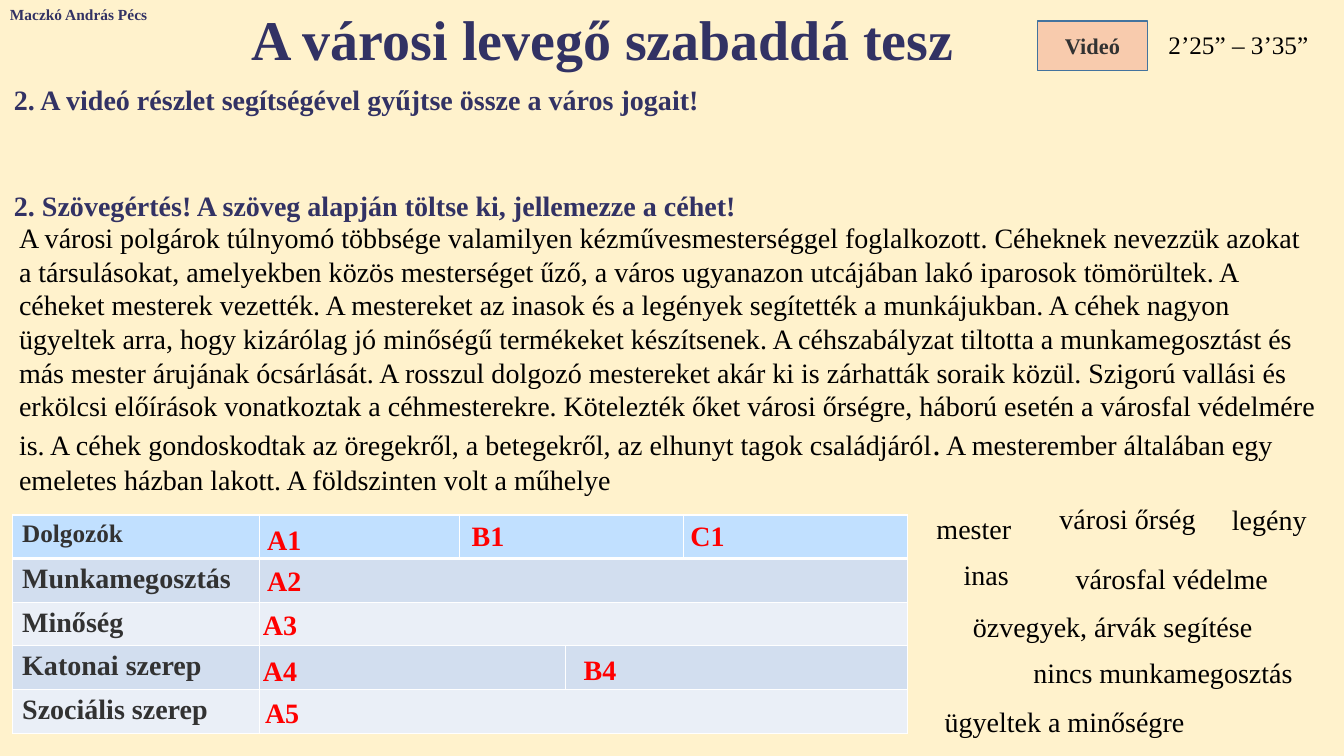
import pptx
import pptx.dml.color
import pptx.enum.shapes
import pptx.enum.text
import pptx.oxml.ns
import pptx.util
from lxml import etree
from pptx.util import Inches

FONT = "Times New Roman"
NAVY, GREY, BLACK, RED, WHITE = "323264", "323232", "000000", "FF0000", "FFFFFF"
CREAM, PEACH, BLUE = "FFF2CC", "F8CBAD", "43739E"
HEADER_FILL, BAND_FILLS = "C1E0FF", ["D2DEEF", "EAEFF7"]
CENTER = pptx.enum.text.PP_ALIGN.CENTER

GUILD_TEXT = (
    "A városi polgárok túlnyomó többsége valamilyen kézművesmesterséggel foglalkozott. "
    "Céheknek nevezzük azokat a társulásokat, amelyekben közös mesterséget űző, a város "
    "ugyanazon utcájában lakó iparosok tömörültek. A céheket mesterek vezették. A mestereket "
    "az inasok és a legények segítették a munkájukban. A céhek nagyon ügyeltek arra, hogy "
    "kizárólag jó minőségű termékeket készítsenek. A céhszabályzat tiltotta a munkamegosztást "
    "és más mester árujának ócsárlását. A rosszul dolgozó mestereket akár ki is zárhatták "
    "soraik közül. Szigorú vallási és erkölcsi előírások vonatkoztak a céhmesterekre. "
    "Kötelezték őket városi őrségre, háború esetén a városfal védelmére is. A céhek "
    "gondoskodtak az öregekről, a betegekről, az elhunyt tagok családjáról"
)
GUILD_ENDING = " A mesterember általában egy emeletes házban lakott. A földszinten volt a műhelye"

COLUMN_WIDTHS = [2.45, 1.99, 1.05, 1.17, 2.22]
ROW_HEIGHT = 0.43
ROW_LABELS = ["Dolgozók", "Munkamegosztás", "Minőség", "Katonai szerep", "Szociális szerep"]
# Row, first column and last column of each merged area
MERGES = [(0, 2, 3), (1, 1, 4), (2, 1, 4), (3, 1, 2), (3, 3, 4), (4, 1, 4)]

# Text, left, top, width
ANSWERS = [
    ("mester", 9.19, 5.03, 1.04),
    ("legény", 12.12, 4.94, 0.95),
    ("inas", 9.46, 5.48, 0.8),
    ("nincs munkamegosztás", 10.15, 6.45, 2.8),
    ("ügyeltek a minőségre", 9.27, 6.94, 2.7),
    ("özvegyek, árvák segítése", 9.55, 6, 2.98),
    ("városi őrség", 10.41, 4.93, 1.74),
    ("városfal védelme", 10.57, 5.52, 2.22),
]
# Text, left, top
CELL_CODES = [
    ("A1", 2.55, 5.13), ("B1", 4.58, 5.09), ("C1", 6.75, 5.09), ("A2", 2.55, 5.54),
    ("A3", 2.51, 5.98), ("A4", 2.51, 6.43), ("B4", 5.69, 6.42), ("A5", 2.53, 6.85),
]


def color(value):
    return pptx.dml.color.RGBColor.from_string(value)


def format_run(run, size, ink, bold=False):
    run.font.name = FONT
    run.font.size = pptx.util.Pt(size)
    run.font.bold = bold
    run.font.color.rgb = color(ink)


def add_text(slide, text, left, top, width, height=0.44, size=20, ink=BLACK,
             bold=False, wrap=True, align=None):
    box = slide.shapes.add_textbox(Inches(left), Inches(top), Inches(width), Inches(height))
    box.text_frame.word_wrap = wrap
    paragraph = box.text_frame.paragraphs[0]
    paragraph.text = text
    paragraph.alignment = align
    format_run(paragraph.runs[0], size, ink, bold)
    return paragraph


def add_button(slide, text, left, top, width, height):
    button = slide.shapes.add_shape(pptx.enum.shapes.MSO_SHAPE.RECTANGLE, Inches(left),
                                    Inches(top), Inches(width), Inches(height))
    button.shadow.inherit = False
    button.fill.solid()
    button.fill.fore_color.rgb = color(PEACH)
    button.line.color.rgb = color(BLUE)
    button.line.width = pptx.util.Pt(1)
    button.text_frame.text = text
    button.text_frame.vertical_anchor = pptx.enum.text.MSO_ANCHOR.MIDDLE
    paragraph = button.text_frame.paragraphs[0]
    paragraph.alignment = CENTER
    format_run(paragraph.runs[0], 16, GREY, bold=True)


def set_borders(cell, top_width, bottom_width):
    properties = cell._tc.get_or_add_tcPr()
    for side, width in [("L", 1), ("R", 1), ("T", top_width), ("B", bottom_width)]:
        line = etree.SubElement(properties, pptx.oxml.ns.qn(f"a:ln{side}"),
                                w=str(pptx.util.Pt(width)))
        fill = etree.SubElement(line, pptx.oxml.ns.qn("a:solidFill"))
        etree.SubElement(fill, pptx.oxml.ns.qn("a:srgbClr"), val=WHITE)


def add_guild_table(slide, left, top):
    row_count = len(ROW_LABELS)
    frame = slide.shapes.add_table(row_count, len(COLUMN_WIDTHS), Inches(left), Inches(top),
                                   Inches(sum(COLUMN_WIDTHS)), Inches(ROW_HEIGHT * row_count))
    table = frame.table
    for column, width in zip(table.columns, COLUMN_WIDTHS):
        column.width = Inches(width)
    for index, label in enumerate(ROW_LABELS):
        table.rows[index].height = Inches(ROW_HEIGHT)
        for cell in table.rows[index].cells:
            set_borders(cell, 3 if index == 1 else 1, 3 if index == 0 else 1)
            cell.fill.solid()
            cell.fill.fore_color.rgb = color(BAND_FILLS[(index - 1) % 2] if index else HEADER_FILL)
        label_cell = table.cell(index, 0)
        label_cell.text = label
        format_run(label_cell.text_frame.paragraphs[0].runs[0], 20 if index else 18, GREY, bold=True)
    for row, first, last in MERGES:
        table.cell(row, first).merge(table.cell(row, last))


def main():
    presentation = pptx.Presentation()
    presentation.slide_width, presentation.slide_height = Inches(13.33), Inches(7.5)
    slide = presentation.slides.add_slide(presentation.slide_layouts[6])
    slide.background.fill.solid()
    slide.background.fill.fore_color.rgb = color(CREAM)

    # Title row
    add_text(slide, "A városi levegő szabaddá tesz", 1.89, 0, 8.17, 0.77, 40, NAVY, True,
             align=CENTER)
    add_text(slide, "Maczkó András Pécs", 0, 0, 1.59, 0.29, 11, NAVY, True)
    add_button(slide, "Videó", 10.29, 0.21, 1.09, 0.49)
    add_text(slide, "2’25” – 3’35”", 11.49, 0.24, 1.72, 0.4, 18)

    # Tasks and reading passage
    add_text(slide, "2. A videó részlet segítségével gyűjtse össze a város jogait!",
             0.04, 0.77, 7.13, ink=NAVY, bold=True, wrap=False)
    add_text(slide, "2. Szövegértés! A szöveg alapján töltse ki, jellemezze a céhet!",
             0.04, 1.82, 7.48, ink=NAVY, bold=True, wrap=False)
    passage = add_text(slide, GUILD_TEXT, 0.09, 2.14, 13.09, 2.86)
    for text, size in [(".", 24), (GUILD_ENDING, 20)]:
        run = passage.add_run()
        run.text = text
        format_run(run, size, BLACK)

    # Table with its cell codes, and the answers to place
    add_guild_table(slide, 0.12, 5.11)
    for text, left, top, width in ANSWERS:
        add_text(slide, text, left, top, width)
    for text, left, top in CELL_CODES:
        add_text(slide, text, left, top, 0.55, ink=RED, bold=True, wrap=False)

    presentation.save("out.pptx")


if __name__ == "__main__":
    main()
